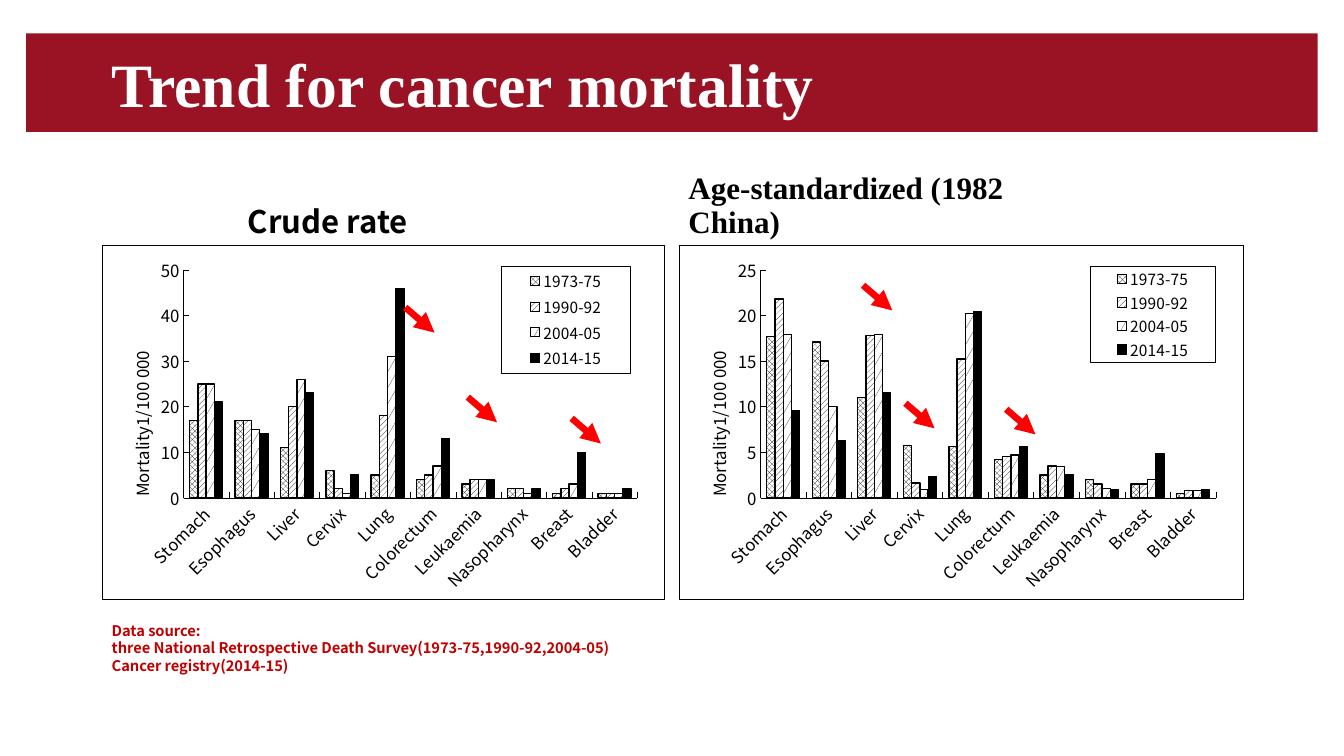
from lxml import etree
from pptx import Presentation, util as u
from pptx.chart.data import CategoryChartData
from pptx.dml.color import RGBColor
from pptx.enum import chart as ch, dml, shapes, text
from pptx.oxml import parse_xml
from pptx.oxml.ns import nsdecls, qn

HUES = {"band": "991324", "ink": "000000", "paper": "FFFFFF",
        "note": "C00000", "arrow": "FF0000"}
SANS, SERIF = "Noto Sans CJK SC", "Times New Roman"
SITES = ["Stomach", "Esophagus", "Liver", "Cervix", "Lung", "Colorectum",
         "Leukaemia", "Nasopharynx", "Breast", "Bladder"]
YEARS = ["1973-75", "1990-92", "2004-05", "2014-15"]
FILLS = [dml.MSO_PATTERN.OUTLINED_DIAMOND, dml.MSO_PATTERN.WIDE_UPWARD_DIAGONAL,
         dml.MSO_PATTERN.SMALL_CONFETTI, None]
CRUDE = [[17, 17, 11, 6, 5, 4, 3, 2, 1, 1],
         [25, 17, 20, 2, 18, 5, 4, 2, 2, 1],
         [25, 15, 26, 1, 31, 7, 4, 1, 3, 1],
         [21, 14, 23, 5, 46, 13, 4, 2, 10, 2]]
AGED = [[17.7, 17.1, 11, 5.7, 5.6, 4.2, 2.5, 2, 1.5, 0.5],
        [21.8, 15, 17.8, 1.6, 15.2, 4.5, 3.5, 1.5, 1.5, 0.8],
        [17.9, 10, 17.9, 0.9, 20.2, 4.7, 3.4, 1, 2, 0.8],
        [9.6, 6.3, 11.5, 2.3, 20.4, 5.6, 2.5, 0.9, 4.9, 0.9]]


def hue(key):
    """Return the named colour."""
    return RGBColor.from_string(HUES[key])


def style(font, size, key="ink", name=SANS, bold=False):
    """Set size, colour, face and weight of a font."""
    font.size, font.name, font.bold = u.Pt(size), name, bold
    font.color.rgb = hue(key)


def edge(line, width=0.25):
    """Draw a line in black."""
    line.color.rgb = hue("ink")
    line.width = u.Pt(width)


def write(slide, box, lines, anchor, gap, **look):
    """Place lines of text in a box."""
    frame = slide.shapes.add_textbox(*map(u.Inches, box)).text_frame
    frame.word_wrap = True
    frame.vertical_anchor = anchor
    frame.text = "\n".join(lines)
    for para in frame.paragraphs:
        para.line_spacing = gap
        style(para.font, **look)


def banner(slide, box):
    """Draw the red band with the slide title."""
    left, top, wide, high = box
    band = slide.shapes.add_shape(shapes.MSO_SHAPE.RECTANGLE, *map(u.Inches, box))
    band.shadow.inherit = False
    band.fill.solid()
    band.fill.fore_color.rgb = hue("band")
    band.line.fill.background()
    write(slide, (left + 0.75, top + 0.07, 9.97, 0.93), ["Trend for cancer mortality"],
          text.MSO_ANCHOR.MIDDLE, 0.9, size=44, key="paper", name=SERIF, bold=True)


def part(chart, tag):
    """Find the first chart element with a tag."""
    return chart.element.find(".//" + qn(tag))


def place(owner, spot, after=None, inner=False):
    """Give a chart part a fixed place, in fractions of the chart."""
    for old in owner.findall(qn("c:layout")):
        owner.remove(old)
    pairs = [("layoutTarget", "inner")] if inner else []
    pairs += [("xMode", "edge"), ("yMode", "edge"), *zip("xywh", spot)]
    tags = "".join(f'<c:{tag} val="{val}"/>' for tag, val in pairs)
    node = parse_xml(f'<c:layout {nsdecls("c")}><c:manualLayout>{tags}</c:manualLayout></c:layout>')
    if after:
        owner.find(qn(after)).addnext(node)
    else:
        owner.insert(0, node)


def ground():
    """Build a white ground with a thin border."""
    return parse_xml(
        f'<c:spPr {nsdecls("c", "a")}><a:solidFill><a:srgbClr val="{HUES["paper"]}"/></a:solidFill>'
        f'<a:ln w="3175"><a:solidFill><a:srgbClr val="{HUES["ink"]}"/></a:solidFill></a:ln></c:spPr>')


def turn(node, angle):
    """Rotate the text of a chart part."""
    body = node.find(".//" + qn("a:bodyPr"))
    body.set("rot", str(angle * 60000))
    body.set("vert", "horz")


def axes(chart, top):
    """Style both axes and the value title."""
    for axis in (chart.category_axis, chart.value_axis):
        axis.has_major_gridlines = False
        axis.major_tick_mark = ch.XL_TICK_MARK.INSIDE
        axis.minor_tick_mark = ch.XL_TICK_MARK.NONE
        style(axis.tick_labels.font, 12)
        edge(axis.format.line)
    turn(part(chart, "c:catAx").find(qn("c:txPr")), -45)
    axis = chart.value_axis
    axis.minimum_scale, axis.maximum_scale, axis.major_unit = 0, top, top / 5
    axis.tick_labels.number_format = "0"
    axis.tick_labels.number_format_is_linked = False
    frame = axis.axis_title.text_frame
    frame.text = "Mortality1/100 000"
    style(frame.paragraphs[0].font, 12)
    title = part(chart, "c:valAx").find(qn("c:title"))
    turn(title, -90)
    place(title, (0.04, 0.29), "c:tx")


def key(chart, spot):
    """Place the boxed legend."""
    chart.has_legend = True
    legend = chart.legend
    legend.position = ch.XL_LEGEND_POSITION.RIGHT
    legend.include_in_layout = False
    style(legend.font, 11)
    node = part(chart, "c:legend")
    place(node, spot, "c:legendPos")
    node.find(qn("c:txPr")).addprevious(ground())


def panel(slide, box, rows, top, spot):
    """Draw one bar chart of mortality by site."""
    data = CategoryChartData()
    data.categories = SITES
    for year, row in zip(YEARS, rows):
        data.add_series(year, row)
    chart = slide.shapes.add_chart(ch.XL_CHART_TYPE.COLUMN_CLUSTERED,
                                   *map(u.Inches, box), data).chart
    chart.has_title = False
    style(chart.font, 12)
    part(chart, "c:chart").addnext(ground())
    plot = chart.plots[0]
    plot.gap_width, plot.overlap, plot.vary_by_categories = 150, 0, False
    for bars, weave in zip(plot.series, FILLS):
        fill = bars.format.fill
        if weave is None:
            fill.solid()
        else:
            fill.patterned()
            fill.pattern = weave
            fill.back_color.rgb = hue("paper")
        fill.fore_color.rgb = hue("ink")
        edge(bars.format.line, 0.75 if weave is None else 1)
    axes(chart, top)
    key(chart, spot)
    place(part(chart, "c:plotArea"), (0.145, 0.07, 0.807, 0.643), inner=True)


def arrow(slide, left, top):
    """Draw a red arrow pointing down and right."""
    link = slide.shapes.add_connector(shapes.MSO_CONNECTOR.STRAIGHT, *map(
        u.Inches, (left, top, left + 0.29, top + 0.25)))
    link.line.color.rgb = hue("arrow")
    link.line.width = u.Pt(4.75)
    props = link.element.spPr
    etree.SubElement(props.find(qn("a:ln")), qn("a:tailEnd")).set("type", "triangle")
    etree.SubElement(props, qn("a:effectLst"))


def main():
    """Build and save the slide."""
    deck = Presentation()
    deck.slide_width, deck.slide_height = u.Inches(13.33), u.Inches(7.5)
    slide = deck.slides.add_slide(deck.slide_layouts[6])
    banner(slide, (0.26, 0.33, 12.81, 0.98))
    low = text.MSO_ANCHOR.BOTTOM
    write(slide, (2.36, 1.75, 4.23, 0.68), ["Crude rate"], low, 0.9, size=22.2, bold=True)
    panel(slide, (1.01, 2.43, 5.58, 3.52), CRUDE, 50, (0.71, 0.06, 0.23, 0.3))
    write(slide, (6.73, 1.75, 4.25, 0.68), ["Age-standardized (1982 China)"],
          low, 0.9, size=22.2, name=SERIF, bold=True)
    panel(slide, (6.73, 2.43, 5.6, 3.52), AGED, 25, (0.73, 0.06, 0.22, 0.27))
    write(slide, (1.01, 6.12, 6.38, 0.63),
          ["Data source:", "three National Retrospective Death Survey(1973-75,1990-92,2004-05)",
           "Cancer registry(2014-15)"],
          text.MSO_ANCHOR.TOP, u.Pt(12.5), size=10.5, key="note", bold=True)
    for spot in [(4.02, 3.05), (4.64, 3.94), (5.67, 4.15),
                 (8.56, 2.83), (8.98, 4), (9.98, 4.06)]:
        arrow(slide, *spot)
    deck.save("out.pptx")


if __name__ == "__main__":
    main()
